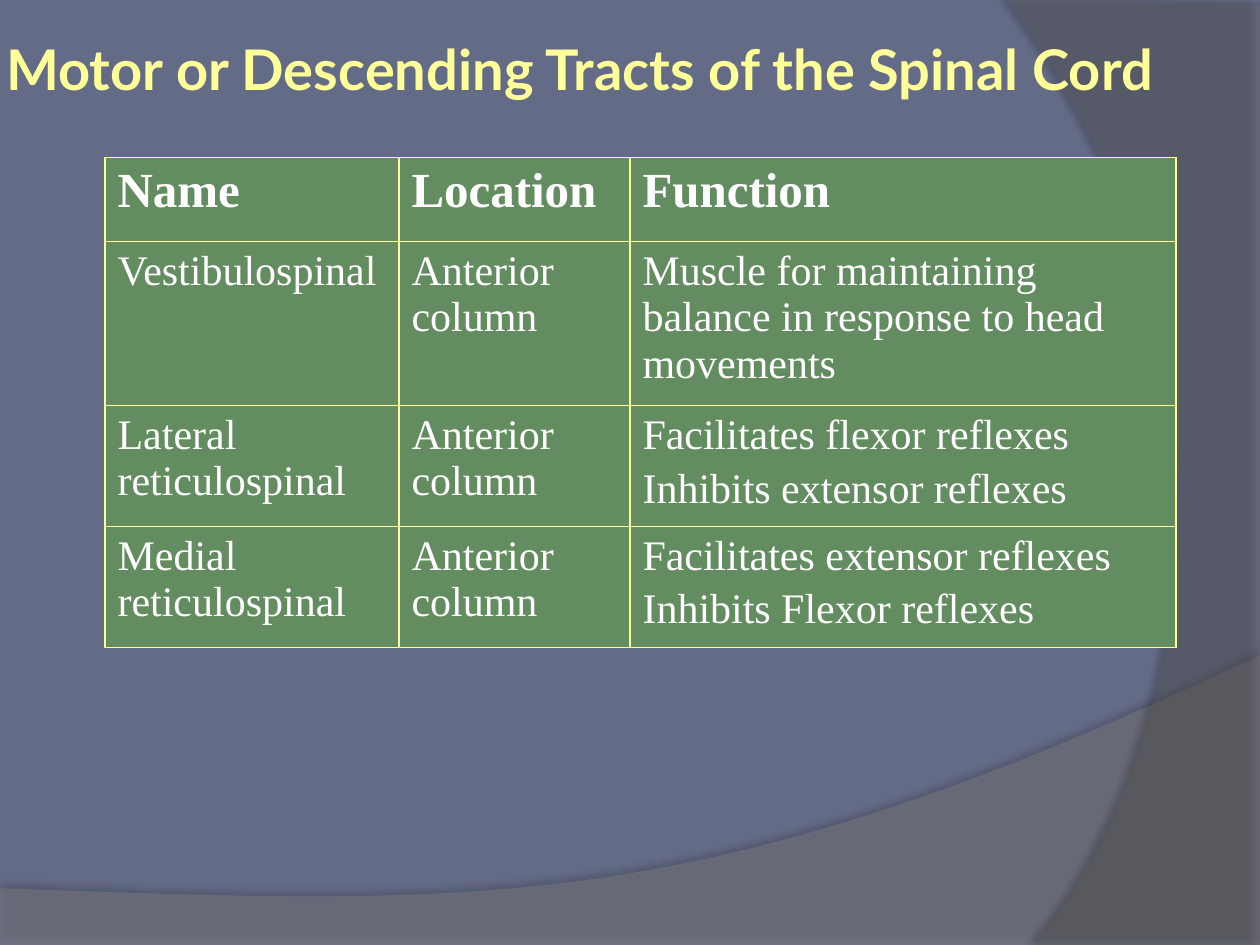
from dataclasses import dataclass

from lxml import etree
from pptx import Presentation
from pptx.dml.color import RGBColor
from pptx.enum.text import MSO_ANCHOR, PP_ALIGN
from pptx.oxml import parse_xml
from pptx.oxml.ns import nsdecls, qn
from pptx.util import Pt

MIDDLE = MSO_ANCHOR.MIDDLE
LEFT = PP_ALIGN.LEFT

SLATE = RGBColor(0x64, 0x6B, 0x86)
GRAY = RGBColor(0x7F, 0x7F, 0x7F)
DARK = RGBColor(0x5E, 0x5E, 0x5E)
CREAM = RGBColor(0xFF, 0xFF, 0x99)
GREEN = RGBColor(0x64, 0x8C, 0x61)
WHITE = RGBColor(0xFF, 0xFF, 0xFF)

TITLE = {"name": "Lato", "size": Pt(32), "bold": True}
HEAD = {"name": "Times New Roman", "size": Pt(28), "bold": True}
BODY = {"name": "Times New Roman", "size": Pt(24), "bold": False}

Point = tuple[float, float]


@dataclass
class Swoosh:
    curve: tuple[Point, Point, Point, Point]
    ends: list[Point]
    color: RGBColor
    alpha: int
    shade: int
    blur: float
    dist: float
    angle: int


SWOOSHES = [
    Swoosh(((720, 374.4), (402.5, 525), (281.5, 517.7), (0, 507.6)),
           [(0, 540), (720, 540)], GRAY, 45, 35, 4, 3.5, 270),
    Swoosh(((591, 540), (673.2, 445.7), (733, 216), (576, 0)),
           [(720, 1.4), (720, 540)], DARK, 40, 45, 4, 4, 180),
]

COLS = [168, 132, 312]
ROWS = [48, 87, 65, 65]
TRACTS = [
    ["Name", "Location", "Function"],
    ["Vestibulospinal", "Anterior column",
     "Muscle for maintaining balance in response to head movements"],
    ["Lateral reticulospinal", "Anterior column",
     "Facilitates flexor reflexes\nInhibits extensor reflexes"],
    ["Medial reticulospinal", "Anterior column",
     "Facilitates extensor reflexes\nInhibits Flexor reflexes"],
]


def bezier(curve: tuple[Point, ...], steps: int = 48) -> list[Point]:
    points = []
    for i in range(steps + 1):
        t = i / steps
        u = 1 - t
        parts = (u ** 3, 3 * u * u * t, 3 * u * t * t, t ** 3)
        points.append((sum(w * p[0] for w, p in zip(parts, curve)),
                       sum(w * p[1] for w, p in zip(parts, curve))))
    return points


def draw_swoosh(slide, item: Swoosh) -> None:
    points = [(Pt(x), Pt(y)) for x, y in bezier(item.curve) + item.ends]
    form = slide.shapes.build_freeform(*points[0])
    form.add_line_segments(points[1:], close=True)
    shape = form.convert_to_shape()
    shape.fill.solid()
    shape.fill.fore_color.rgb = item.color
    shape.line.fill.background()
    # Transparency and soft outer shadow
    props = shape._element.spPr
    tint = props.find(qn("a:solidFill")).find(qn("a:srgbClr"))
    etree.SubElement(tint, qn("a:alpha"), val=str(item.alpha * 1000))
    props.append(parse_xml(
        f'<a:effectLst {nsdecls("a")}><a:outerShdw blurRad="{Pt(item.blur)}" '
        f'dist="{Pt(item.dist)}" dir="{item.angle * 60000}" algn="ctr" '
        f'rotWithShape="0"><a:srgbClr val="000000">'
        f'<a:alpha val="{item.shade * 1000}"/></a:srgbClr>'
        f'</a:outerShdw></a:effectLst>'))


def style(para, look: dict, color: RGBColor) -> None:
    para.alignment = LEFT
    for key, value in look.items():
        setattr(para.font, key, value)
    para.font.color.rgb = color


def draw_title(slide, text: str) -> None:
    box = slide.shapes.add_textbox(0, 0, Pt(720), Pt(78))
    frame = box.text_frame
    frame.word_wrap = True
    frame.vertical_anchor = MIDDLE
    for side in ("left", "top", "right", "bottom"):
        setattr(frame, f"margin_{side}", Pt(3.6))
    frame.text = text
    style(frame.paragraphs[0], TITLE, CREAM)


def edge(cell) -> None:
    props = cell._tc.get_or_add_tcPr()
    for i, tag in enumerate(("lnL", "lnR", "lnT", "lnB")):
        props.insert(i, parse_xml(
            f'<a:{tag} {nsdecls("a")} w="{Pt(1)}"><a:solidFill>'
            f'<a:srgbClr val="{CREAM}"/></a:solidFill></a:{tag}>'))


def fill_cell(cell, text: str, look: dict) -> None:
    cell.fill.solid()
    cell.fill.fore_color.rgb = GREEN
    edge(cell)
    cell.text_frame.text = text
    for i, para in enumerate(cell.text_frame.paragraphs):
        if i:
            para.space_before = Pt(4.3)
        style(para, look, WHITE)


def draw_table(slide) -> None:
    table = slide.shapes.add_table(
        len(ROWS), len(COLS), Pt(60), Pt(90), Pt(sum(COLS)), Pt(sum(ROWS))).table
    table.first_row = table.horz_banding = False
    for col, width in zip(table.columns, COLS):
        col.width = Pt(width)
    for row, height in zip(table.rows, ROWS):
        row.height = Pt(height)
    for r, texts in enumerate(TRACTS):
        for c, text in enumerate(texts):
            fill_cell(table.cell(r, c), text, BODY if r else HEAD)


def main() -> None:
    deck = Presentation()
    deck.slide_width, deck.slide_height = Pt(720), Pt(540)
    slide = deck.slides.add_slide(deck.slide_layouts[6])
    # Backdrop
    slide.background.fill.solid()
    slide.background.fill.fore_color.rgb = SLATE
    for item in SWOOSHES:
        draw_swoosh(slide, item)
    # Content
    draw_title(slide, "Motor or Descending Tracts of the Spinal Cord")
    draw_table(slide)
    deck.save("out.pptx")


if __name__ == "__main__":
    main()
